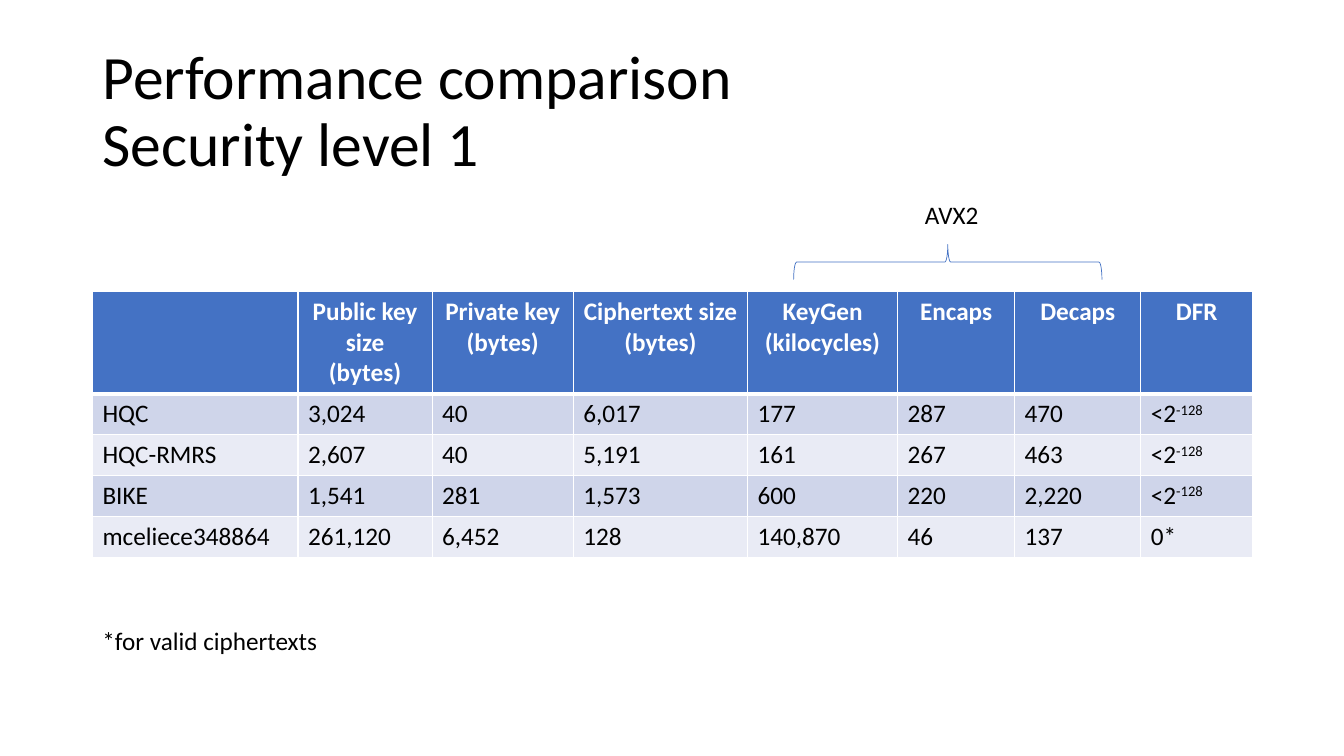
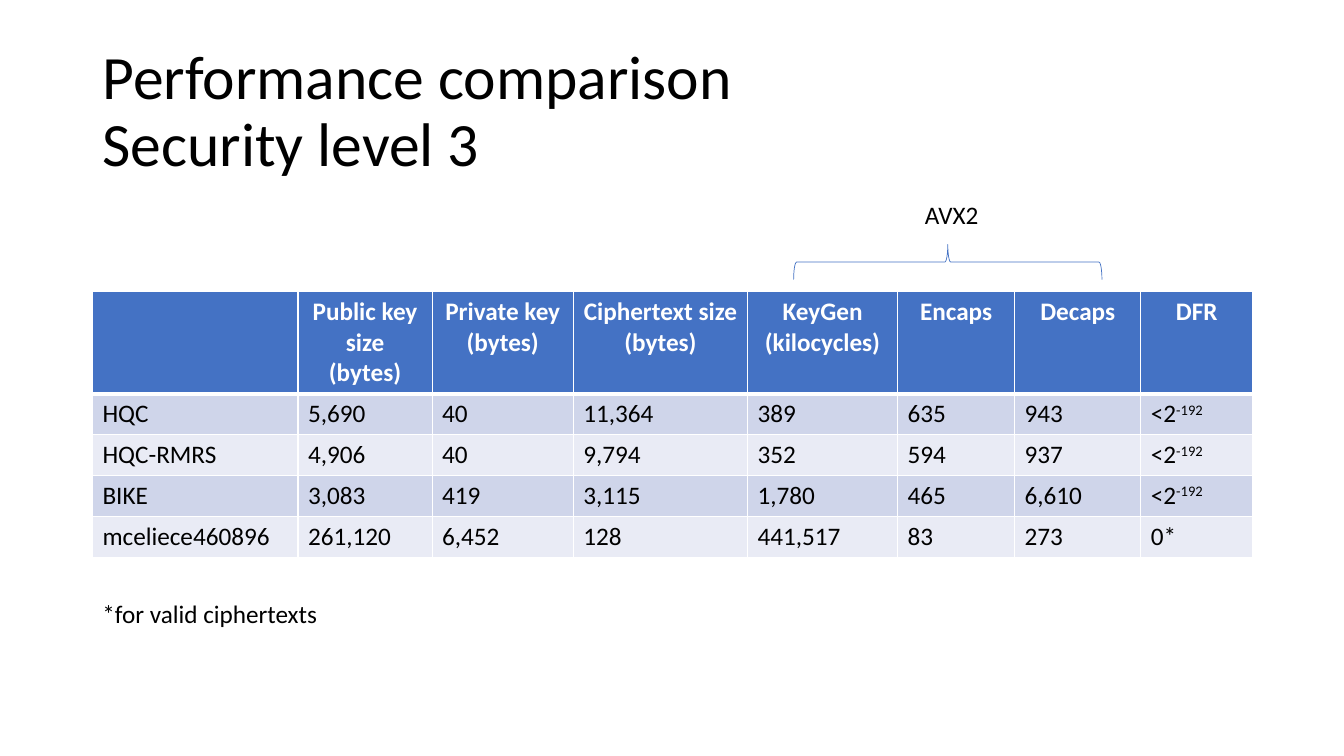
from lxml import etree
from pptx import Presentation
from pptx.dml.color import RGBColor
from pptx.enum.shapes import MSO_SHAPE
from pptx.enum.text import MSO_ANCHOR, PP_ALIGN
from pptx.oxml.ns import qn
from pptx.util import Cm, Pt

LEFT, CENTER = PP_ALIGN.LEFT, PP_ALIGN.CENTER
MIDDLE = MSO_ANCHOR.MIDDLE
LEFT_BRACE = MSO_SHAPE.LEFT_BRACE
TITLE_ONLY = 5

FONT = "Calibri"
COLORS = {
    "text": "000000",
    "white": "FFFFFF",
    "accent": "4472C4",
    "band_dark": "CFD5EA",
    "band_light": "E9EBF5",
}

# Boxes are left, top, width, height in centimetres
MARGIN = 2.33
TITLE_BOX = (MARGIN, 1.01, 29.21, 3.68)
BRACE_BOX = (20.0, 6.16, 7.77, 0.89)
LABEL_BOX = (23.06, 4.9, 2.08, 1.02)
TABLE_TOP = 7.34
COLUMN_WIDTHS = [5.18, 3.38, 3.56, 4.39, 3.78, 2.95, 3.18, 2.82]
HEADER_HEIGHT, ROW_HEIGHT = 2.56, 1.03

HEADERS = ["", "Public key size (bytes)", "Private key (bytes)", "Ciphertext size (bytes)",
           "KeyGen (kilocycles)", "Encaps", "Decaps", "DFR"]

# A caret in a cell starts a superscript
LEVELS = [
    {"title": "Performance comparison\vSecurity level 1", "note_top": 15.62, "rows": [
        ["HQC", "3,024", "40", "6,017", "177", "287", "470", "<2^-128"],
        ["HQC-RMRS", "2,607", "40", "5,191", "161", "267", "463", "<2^-128"],
        ["BIKE", "1,541", "281", "1,573", "600", "220", "2,220", "<2^-128"],
        ["mceliece348864", "261,120", "6,452", "128", "140,870", "46", "137", "0*"],
    ]},
    {"title": "Performance comparison\vSecurity level 3", "note_top": 14.94, "rows": [
        ["HQC", "5,690", "40", "11,364", "389", "635", "943", "<2^-192"],
        ["HQC-RMRS", "4,906", "40", "9,794", "352", "594", "937", "<2^-192"],
        ["BIKE", "3,083", "419", "3,115", "1,780", "465", "6,610", "<2^-192"],
        ["mceliece460896", "261,120", "6,452", "128", "441,517", "83", "273", "0*"],
    ]},
]


def color(name):
    return RGBColor.from_string(COLORS[name])


def lengths(box):
    return [Cm(value) for value in box]


def write(text_frame, text, size=18, color_name="text", bold=False, align=LEFT, spacing=None):
    base, _, superscript = text.partition("^")
    paragraph = text_frame.paragraphs[0]
    paragraph.text = base
    paragraph.alignment = align
    paragraph.line_spacing = spacing
    if superscript:
        run = paragraph.add_run()
        run.text = superscript
        run.font._element.set("baseline", "30000")
    for run in paragraph.runs:
        run.font.name = FONT
        run.font.size = Pt(size)
        run.font.bold = bold
        run.font.color.rgb = color(color_name)


def add_title(slide, box, text):
    title = slide.shapes.title
    title.left, title.top, title.width, title.height = lengths(box)
    title.text_frame.vertical_anchor = MIDDLE
    title.text_frame.word_wrap = True
    write(title.text_frame, text, size=44, spacing=0.9)


def add_text(slide, box, text):
    text_frame = slide.shapes.add_textbox(*lengths(box)).text_frame
    text_frame.word_wrap = True
    write(text_frame, text)


def add_brace(slide, box):
    """Draw a brace that opens downwards and fills the box once it is turned."""
    left, top, width, height = box
    shift = (width - height) / 2
    upright = (left + shift, top - shift, height, width)
    brace = slide.shapes.add_shape(LEFT_BRACE, *lengths(upright))
    brace.rotation = 90
    brace.shadow.inherit = False
    brace.fill.background()
    brace.line.color.rgb = color("accent")
    brace.line.width = Pt(0.5)


def set_borders(cell, top=1, bottom=1):
    properties = cell._tc.get_or_add_tcPr()
    widths = {"a:lnL": 1, "a:lnR": 1, "a:lnT": top, "a:lnB": bottom}
    for position, (tag, width) in enumerate(widths.items()):
        line = etree.Element(qn(tag), w=str(Pt(width)))
        fill = etree.SubElement(line, qn("a:solidFill"))
        etree.SubElement(fill, qn("a:srgbClr"), val=COLORS["white"])
        properties.insert(position, line)


def add_table(slide, left, top, rows):
    heights = [HEADER_HEIGHT] + [ROW_HEIGHT] * len(rows)
    box = (left, top, sum(COLUMN_WIDTHS), sum(heights))
    table = slide.shapes.add_table(len(heights), len(COLUMN_WIDTHS), *lengths(box)).table
    for column, width in zip(table.columns, COLUMN_WIDTHS):
        column.width = Cm(width)
    for row, height in zip(table.rows, heights):
        row.height = Cm(height)

    for row_index, values in enumerate([HEADERS] + rows):
        is_header = row_index == 0
        band = "accent" if is_header else ("band_light", "band_dark")[row_index % 2]
        for column_index, value in enumerate(values):
            cell = table.cell(row_index, column_index)
            cell.fill.solid()
            cell.fill.fore_color.rgb = color(band)
            set_borders(cell, top=3 if row_index == 1 else 1, bottom=3 if is_header else 1)
            if is_header:
                write(cell.text_frame, value, color_name="white", bold=True, align=CENTER)
            else:
                write(cell.text_frame, value)


def add_comparison_slide(presentation, title, rows, note_top):
    slide = presentation.slides.add_slide(presentation.slide_layouts[TITLE_ONLY])
    add_title(slide, TITLE_BOX, title)
    add_table(slide, MARGIN, TABLE_TOP, rows)
    # Bracket over the three timing columns
    add_brace(slide, BRACE_BOX)
    add_text(slide, LABEL_BOX, "AVX2")
    # Footnote
    add_text(slide, (MARGIN, note_top, 6, 1.02), "*for valid ciphertexts")


def main():
    presentation = Presentation()
    presentation.slide_width = Cm(33.87)
    presentation.slide_height = Cm(19.05)
    for level in LEVELS:
        add_comparison_slide(presentation, **level)
    presentation.save("out.pptx")


if __name__ == "__main__":
    main()
